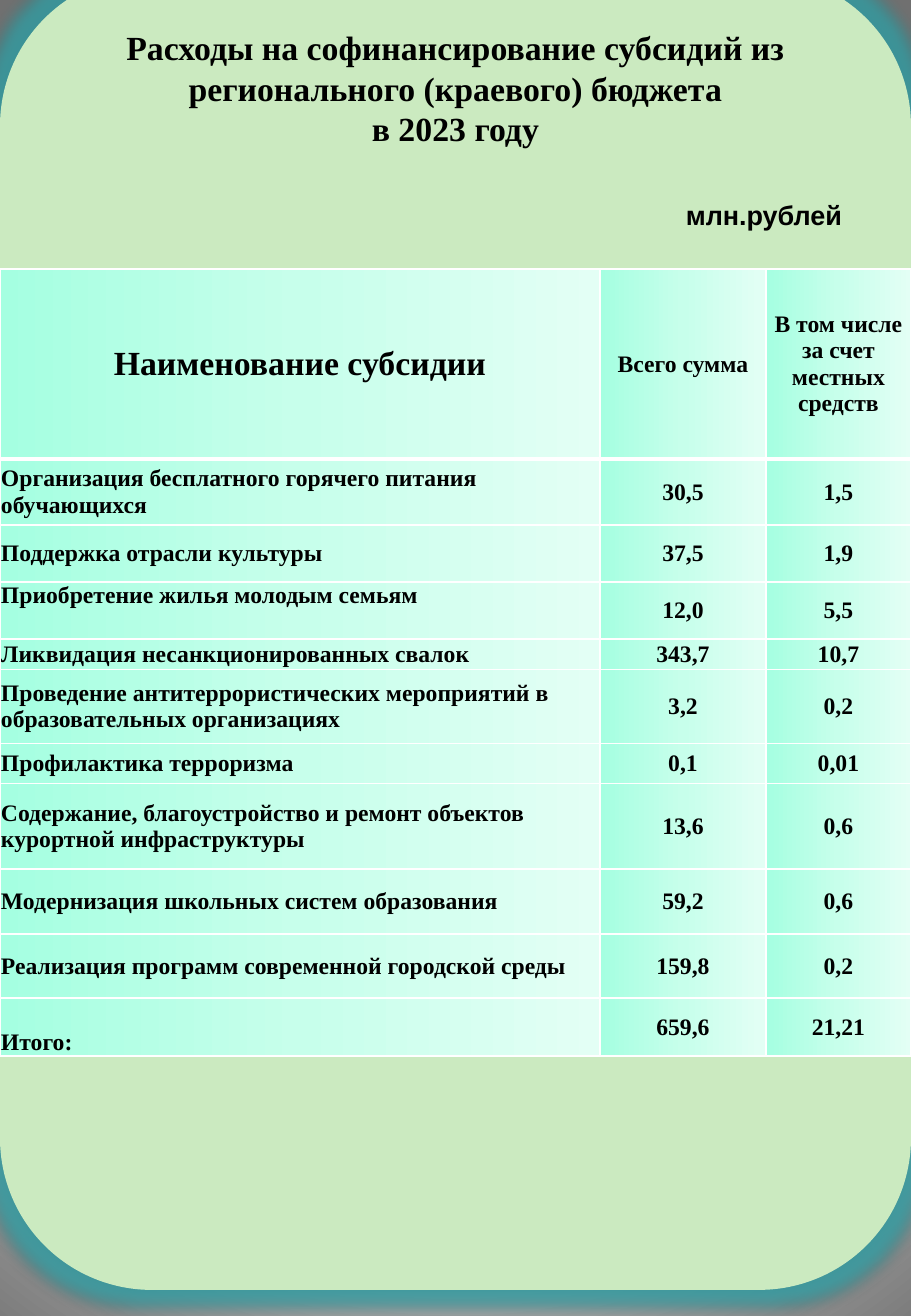
from dataclasses import dataclass

from pptx import Presentation
from pptx.dml.color import RGBColor
from pptx.enum.shapes import MSO_SHAPE
from pptx.enum.text import MSO_ANCHOR, MSO_AUTO_SIZE, PP_ALIGN
from pptx.oxml import parse_xml
from pptx.oxml.ns import nsdecls
from pptx.shapes.base import BaseShape
from pptx.slide import Slide
from pptx.table import _Cell
from pptx.text.text import TextFrame
from pptx.util import Pt

TOP, MIDDLE, BOTTOM = MSO_ANCHOR.TOP, MSO_ANCHOR.MIDDLE, MSO_ANCHOR.BOTTOM
LEFT, CENTER = PP_ALIGN.LEFT, PP_ALIGN.CENTER
ROUND_RECT = MSO_SHAPE.ROUNDED_RECTANGLE
NO_FIT = MSO_AUTO_SIZE.NONE

SERIF, SANS = "Times New Roman", "Arial"
BLACK, WHITE, GREEN, TEAL = "000000", "FFFFFF", "CBEAC0", "35A8AE"
MINT = [(0, "A5FFE1"), (50, "C7FFEB"), (100, "E3FFF5")]
GRAY = [(0, WHITE), (25, WHITE), (100, "707070")]
WIDTH, HEIGHT = 911, 1316
COLUMNS = [600, 166, 145]


@dataclass
class Grant:
    name: str
    total: str
    local: str
    height: int
    anchor: MSO_ANCHOR = MIDDLE


HEADER = Grant("Наименование субсидии", "Всего сумма",
               "В том числе за счет местных средств", 190)
GRANTS = [
    Grant("Организация бесплатного горячего питания обучающихся", "30,5", "1,5", 66),
    Grant("Поддержка отрасли культуры", "37,5", "1,9", 57),
    Grant("Приобретение жилья молодым семьям", "12,0", "5,5", 57, TOP),
    Grant("Ликвидация несанкционированных свалок", "343,7", "10,7", 30),
    Grant("Проведение антитеррористических мероприятий в образовательных организациях",
          "3,2", "0,2", 74),
    Grant("Профилактика терроризма", "0,1", "0,01", 40),
    Grant("Содержание, благоустройство и ремонт объектов курортной инфраструктуры",
          "13,6", "0,6", 86),
    Grant("Модернизация школьных систем образования", "59,2", "0,6", 65),
    Grant("Реализация программ современной городской среды", "159,8", "0,2", 64),
    Grant("Итого:", "659,6", "21,21", 58, BOTTOM),
]


def px(count: int) -> int:
    return count * 7526


def color(value: str) -> RGBColor:
    return RGBColor.from_string(value)


def place(shape: BaseShape, x: int, y: int, w: int, h: int) -> None:
    shape.left, shape.top, shape.width, shape.height = px(x), px(y), px(w), px(h)


def style(frame: TextFrame, size: int, font: str = SERIF,
          align: PP_ALIGN = CENTER) -> None:
    for line in frame.paragraphs:
        line.alignment = align
        for run in line.runs:
            run.font.name, run.font.size, run.font.bold = font, Pt(size), True
            run.font.color.rgb = color(BLACK)


def inset(box: TextFrame | _Cell, side: int, edge: int) -> None:
    box.margin_left = box.margin_right = px(side)
    box.margin_top = box.margin_bottom = px(edge)


def gradient(stops: list[tuple[int, str]], shade: str):
    marks = "".join(f'<a:gs pos="{at * 1000}"><a:srgbClr val="{value}"/></a:gs>'
                    for at, value in stops)
    return parse_xml(f'<a:gradFill {nsdecls("a")} rotWithShape="1">'
                     f'<a:gsLst>{marks}</a:gsLst>{shade}</a:gradFill>')


def backdrop(slide: Slide) -> None:
    slide.background.fill.solid()
    holder = slide._element.cSld.bg.bgPr
    holder.replace(holder[0], gradient(
        GRAY, '<a:path path="circle"><a:fillToRect l="10000" t="110000" '
              'r="10000" b="100000"/></a:path>'))


def panel(slide: Slide) -> None:
    """Add the rounded green sheet, with its glow, behind everything else."""
    sheet = slide.shapes.add_shape(ROUND_RECT, 0, px(-26), px(WIDTH), px(HEIGHT))
    sheet.fill.solid()
    sheet.fill.fore_color.rgb = color(GREEN)
    sheet.line.fill.background()
    sheet._element.spPr.append(parse_xml(
        f'<a:effectLst {nsdecls("a")}>'
        f'<a:glow rad="228600"><a:srgbClr val="{TEAL}"><a:alpha val="75000"/>'
        '</a:srgbClr></a:glow>'
        f'<a:outerShdw blurRad="{Pt(3.5)}" dist="{Pt(2.2)}" dir="5400000" '
        f'rotWithShape="0"><a:srgbClr val="{BLACK}"><a:alpha val="32000"/>'
        '</a:srgbClr></a:outerShdw></a:effectLst>'))
    slide.shapes._spTree.insert(2, sheet._element)


def heading(slide: Slide) -> None:
    title = slide.shapes.title
    place(title, 80, 27, 751, 122)
    frame = title.text_frame
    frame.text = ("Расходы на софинансирование субсидий из регионального "
                  "(краевого) бюджета\nв 2023 году")
    frame.word_wrap, frame.auto_size = True, NO_FIT
    frame.vertical_anchor = MIDDLE
    inset(frame, 0, 0)
    style(frame, 20)
    for line in frame.paragraphs:
        line.line_spacing = Pt(24)
        line.space_before = Pt(0)


def unit(slide: Slide) -> None:
    label = slide.shapes.add_textbox(px(674), px(193), px(182), px(45))
    label.text_frame.text = "млн.рублей"
    label.text_frame.word_wrap = False
    style(label.text_frame, 16, SANS, LEFT)


def paint(cell: _Cell, base: int) -> None:
    """Draw the cell's borders, the lower one base points wide, and its fill."""
    props = cell._tc.get_or_add_tcPr()
    for side, width in zip("LRTB", (1, 1, 1, base)):
        props.append(parse_xml(
            f'<a:ln{side} {nsdecls("a")} w="{Pt(width)}"><a:solidFill>'
            f'<a:srgbClr val="{WHITE}"/></a:solidFill></a:ln{side}>'))
    props.append(gradient(MINT, '<a:lin ang="0" scaled="0"/>'))


def grid(slide: Slide) -> None:
    rows = [HEADER, *GRANTS]
    height = sum(row.height for row in rows)
    table = slide.shapes.add_table(len(rows), len(COLUMNS), 0, px(269),
                                   px(WIDTH), px(height)).table
    table.first_row = table.horz_banding = False
    for column, width in zip(table.columns, COLUMNS):
        column.width = px(width)
    for r, row in enumerate(rows):
        table.rows[r].height = px(row.height)
        head = row is HEADER
        for c, text in enumerate((row.name, row.total, row.local)):
            cell = table.cell(r, c)
            cell.text_frame.text = text
            cell.vertical_anchor = row.anchor if c == 0 else MIDDLE
            inset(cell, 5 if head else 1, 5 if head else 1)
            style(cell.text_frame, 20 if head and c == 0 else 14,
                  align=CENTER if head or c else LEFT)
            paint(cell, 3 if head else 1)


def main() -> None:
    deck = Presentation()
    deck.slide_width, deck.slide_height = px(WIDTH), px(HEIGHT)
    slide = deck.slides.add_slide(deck.slide_layouts[5])
    backdrop(slide)
    panel(slide)
    heading(slide)
    unit(slide)
    grid(slide)
    deck.save("out.pptx")


if __name__ == "__main__":
    main()
